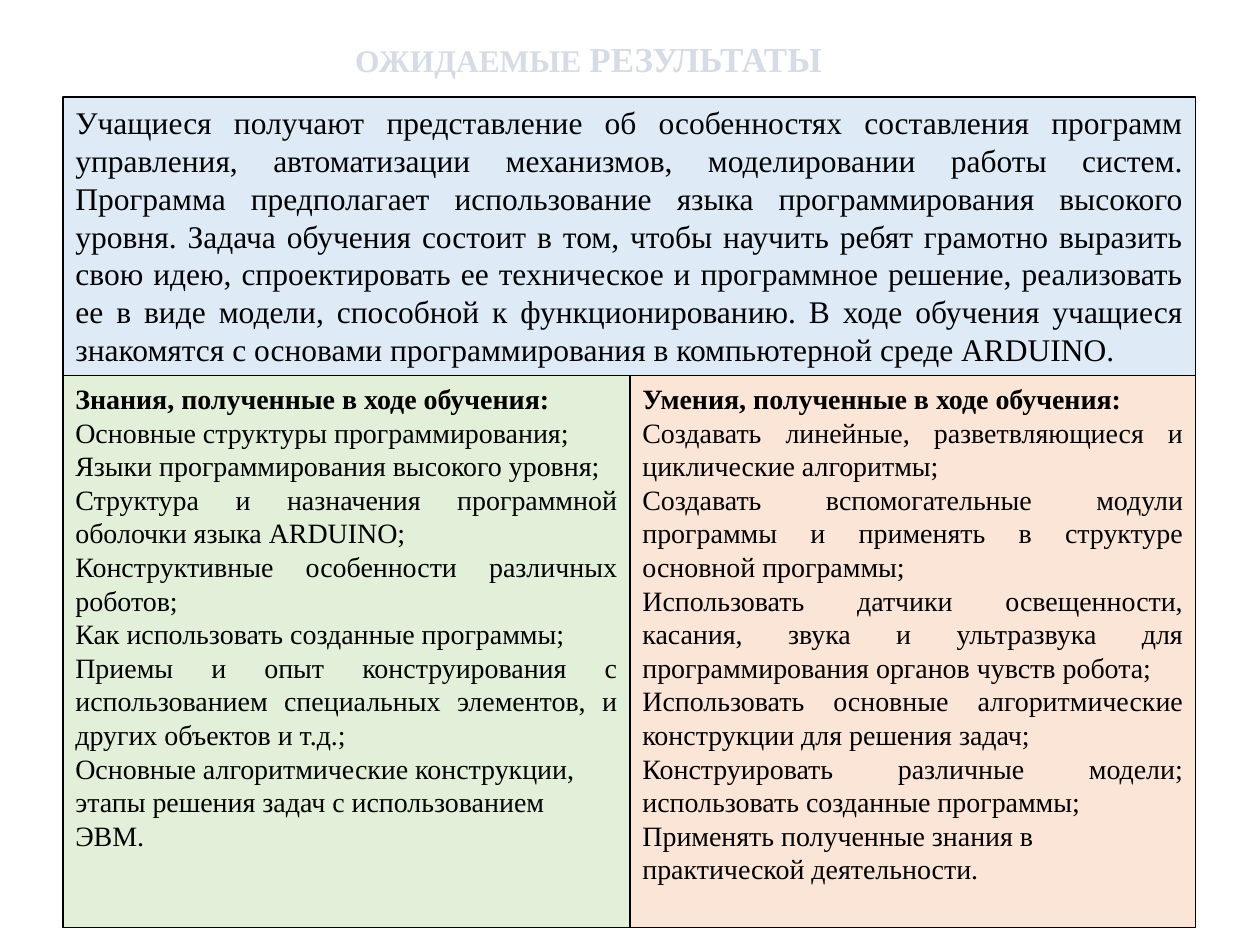
from lxml.etree import SubElement
from pptx import Presentation
from pptx.dml.color import RGBColor
from pptx.enum.dml import MSO_PATTERN
from pptx.enum.shapes import MSO_SHAPE
from pptx.enum.text import MSO_ANCHOR, MSO_AUTO_SIZE, PP_ALIGN
from pptx.oxml.ns import qn
from pptx.util import Inches, Pt

FONT = "Times New Roman"
COLORS = {
    "text": "000000",
    "summary": "DEEBF7",
    "knowledge": "E2F0D9",
    "skills": "FBE5D6",
    "title_stripe": "44546A",
    "title_base": "D6DCE5",
    "title_outline": "333F50",
}
SUMMARY = (
    "Учащиеся получают представление об особенностях составления программ управления, "
    "автоматизации механизмов, моделировании работы систем. Программа предполагает "
    "использование языка программирования высокого уровня. Задача обучения состоит в том, "
    "чтобы научить ребят грамотно выразить свою идею, спроектировать ее техническое и "
    "программное решение, реализовать ее в виде модели, способной к функционированию. "
    "В ходе обучения учащиеся знакомятся с основами программирования в компьютерной "
    "среде ARDUINO. "
)
KNOWLEDGE = [
    "Знания, полученные в ходе обучения:",
    "Основные структуры программирования; ",
    "Языки программирования высокого уровня; ",
    "Структура и назначения программной оболочки языка ARDUINO; ",
    "Конструктивные особенности различных роботов;\nКак использовать созданные программы;",
    "Приемы и опыт конструирования с использованием специальных элементов, "
    "и других объектов и т.д.; ",
    "Основные алгоритмические конструкции, этапы решения задач с использованием ЭВМ.",
]
SKILLS = [
    "Умения, полученные в ходе обучения:",
    "Создавать линейные, разветвляющиеся и циклические алгоритмы; ",
    "Создавать вспомогательные модули программы и применять в структуре основной программы; ",
    "Использовать датчики освещенности, касания, звука и ультразвука для "
    "программирования органов чувств робота; ",
    "Использовать основные алгоритмические конструкции для решения задач; ",
    "Конструировать различные модели; использовать созданные программы; ",
    "Применять полученные знания в практической деятельности.",
]


def color(name):
    """Return the named colour."""
    return RGBColor.from_string(COLORS[name])


def add_span(para, text, size, bold=False):
    """Add one run in the slide font and return it."""
    span = para.add_run()
    span.text = text
    span.font.name = FONT
    span.font.size = Pt(size)
    span.font.bold = bold
    return span


def add_panel(page, place, fill, size):
    """Add an outlined rectangle and return its empty text frame."""
    box = page.shapes.add_shape(MSO_SHAPE.RECTANGLE, *map(Inches, place))
    box.shadow.inherit = False
    box.fill.solid()
    box.fill.fore_color.rgb = color(fill)
    box.line.color.rgb = color("text")
    box.line.width = Pt(size)
    frame = box.text_frame
    frame.word_wrap = True
    frame.vertical_anchor = MSO_ANCHOR.TOP
    return frame


def write_panel(frame, texts, size, headed=False):
    """Write justified paragraphs, with a bold heading and a left-aligned end if headed."""
    for index, text in enumerate(texts):
        para = frame.paragraphs[0] if index == 0 else frame.add_paragraph()
        is_end = headed and index == len(texts) - 1
        para.alignment = PP_ALIGN.LEFT if is_end else PP_ALIGN.JUSTIFY
        for number, line in enumerate(text.split("\n")):
            if number:
                para.add_line_break()
            span = add_span(para, line, size, headed and index == 0)
            span.font.color.rgb = color("text")


def add_title_span(para, text, size):
    """Add a bold run with a striped fill and a thin outline."""
    span = add_span(para, text, size, True)
    fill = span.font.fill
    fill.patterned()
    fill.pattern = MSO_PATTERN.DARK_UPWARD_DIAGONAL
    fill.fore_color.rgb = color("title_stripe")
    fill.back_color.rgb = color("title_base")
    properties = span.font._element
    outline = SubElement(properties, qn("a:ln"), w=str(Pt(1)))
    solid = SubElement(outline, qn("a:solidFill"))
    SubElement(solid, qn("a:srgbClr"), val=COLORS["title_outline"])
    properties.insert(0, outline)


def add_title(page):
    """Add the slide title."""
    box = page.shapes.add_textbox(Inches(2.72), Inches(0.25), Inches(3.94), Inches(0.44))
    frame = box.text_frame
    frame.word_wrap = False
    frame.auto_size = MSO_AUTO_SIZE.SHAPE_TO_FIT_TEXT
    para = frame.paragraphs[0]
    add_title_span(para, "ОЖИДАЕМЫЕ ", 18)
    add_title_span(para, "РЕЗУЛЬТАТЫ", 20)


def main():
    """Build the slide and save it."""
    deck = Presentation()
    deck.slide_width, deck.slide_height = Inches(10), Inches(7.5)
    page = deck.slides.add_slide(deck.slide_layouts[6])
    summary = add_panel(page, (0.5, 0.77, 8.99, 2.22), "summary", 0.75)
    write_panel(summary, [SUMMARY], 18)
    add_title(page)
    columns = [(0.5, 4.5, "knowledge", KNOWLEDGE), (5, 4.49, "skills", SKILLS)]
    for left, width, fill, texts in columns:
        frame = add_panel(page, (left, 2.98, width, 4.38), fill, 0.75)
        write_panel(frame, texts, 16, headed=True)
    deck.save("out.pptx")


if __name__ == "__main__":
    main()
